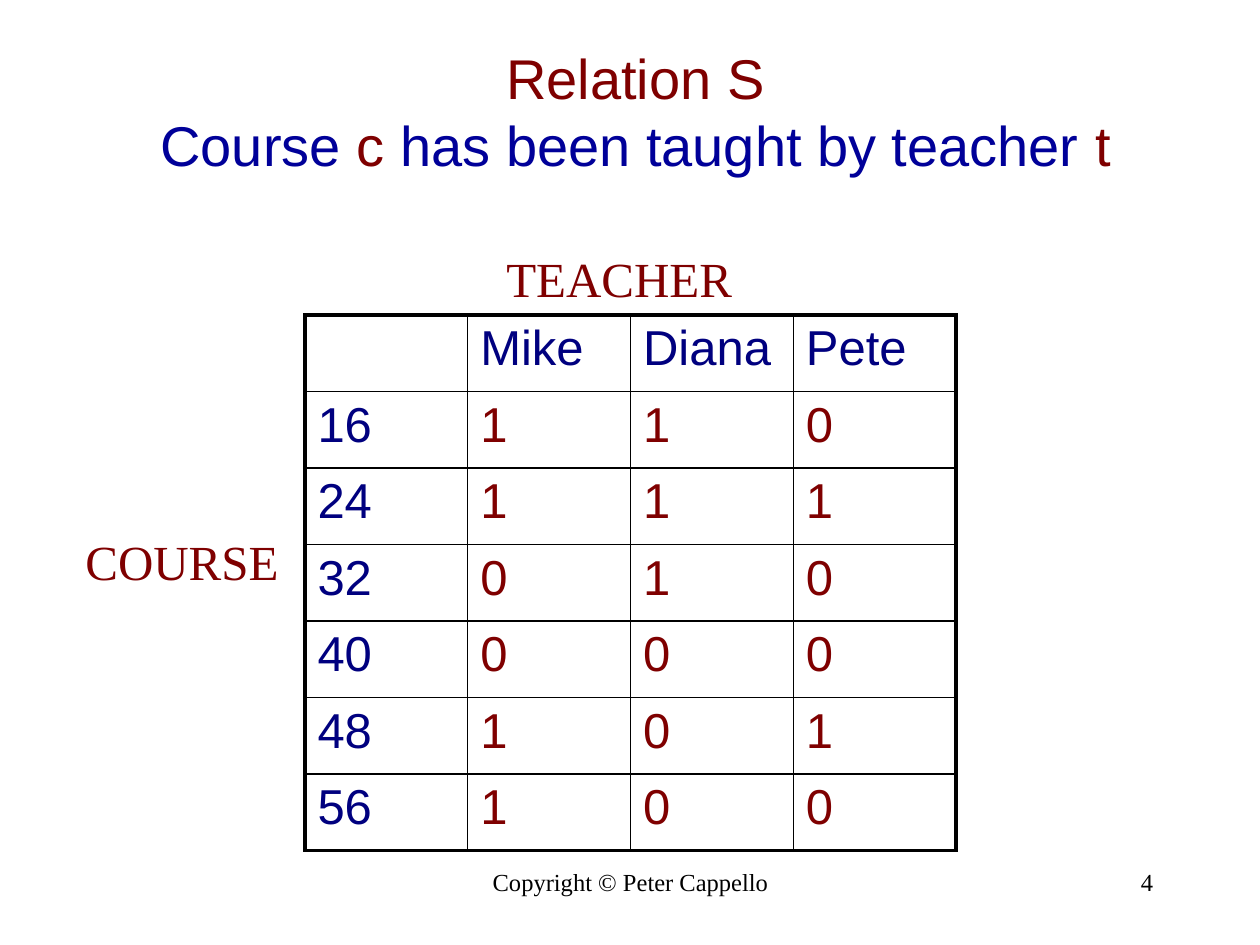
from lxml import etree
from pptx import Presentation
from pptx.dml.color import RGBColor
from pptx.enum.text import MSO_ANCHOR, MSO_AUTO_SIZE, PP_ALIGN
from pptx.oxml.ns import qn
from pptx.util import Inches, Pt

BLACK = RGBColor(0x00, 0x00, 0x00)
MAROON = RGBColor(0x7F, 0x00, 0x00)
NAVY = RGBColor(0x00, 0x00, 0x7F)
BLUE = RGBColor(0x00, 0x00, 0x99)
LEFT, CENTER, RIGHT = PP_ALIGN.LEFT, PP_ALIGN.CENTER, PP_ALIGN.RIGHT
MIDDLE = MSO_ANCHOR.MIDDLE
NO_AUTOFIT = MSO_AUTO_SIZE.NONE
FIT_SHAPE = MSO_AUTO_SIZE.SHAPE_TO_FIT_TEXT

SANS, SERIF = "Arial", "Times New Roman"
TITLE_ONLY = 5
OUTER, INNER = Pt(2.25), Pt(1)

TEACHING = [
    ["", "Mike", "Diana", "Pete"],
    ["16", "1", "1", "0"],
    ["24", "1", "1", "1"],
    ["32", "0", "1", "0"],
    ["40", "0", "0", "0"],
    ["48", "1", "0", "1"],
    ["56", "1", "0", "0"],
]


def style(font, name, size, color):
    font.name = name
    font.size = Pt(size)
    font.color.rgb = color


def add_title(slide):
    title = slide.shapes.title
    title.left, title.top = Inches(0.42), Inches(0.25)
    title.width, title.height = Inches(9.25), Inches(1.25)
    frame = title.text_frame
    frame.auto_size = NO_AUTOFIT
    frame.vertical_anchor = MIDDLE
    heading = frame.paragraphs[0]
    heading.alignment = CENTER
    style(heading.font, SANS, 32, MAROON)
    heading.add_run().text = "Relation S"
    heading.add_line_break()
    for words, color in [
        ("Course ", BLUE),
        ("c", MAROON),
        (" has been taught by teacher ", BLUE),
        ("t", MAROON),
    ]:
        run = heading.add_run()
        run.text = words
        run.font.color.rgb = color


def add_text(slide, words, box, size, color, alignment=LEFT, wrap=True):
    frame = slide.shapes.add_textbox(*map(Inches, box)).text_frame
    frame.word_wrap = wrap
    frame.auto_size = NO_AUTOFIT if wrap else FIT_SHAPE
    line = frame.paragraphs[0]
    line.text = words
    line.alignment = alignment
    style(line.font, SERIF, size, color)


def set_borders(cell, widths):
    properties = cell._tc.get_or_add_tcPr()
    for index, (side, width) in enumerate(widths.items()):
        border = etree.Element(qn(f"a:{side}"), w=str(width))
        fill = etree.SubElement(border, qn("a:solidFill"))
        etree.SubElement(fill, qn("a:srgbClr"), val=str(BLACK))
        properties.insert(index, border)


def add_relation_table(slide):
    rows, columns = len(TEACHING), len(TEACHING[0])
    table = slide.shapes.add_table(
        rows, columns, Inches(2.42), Inches(2.5), Inches(5.17), Inches(4.25)
    ).table
    table.first_row = table.horz_banding = False
    for r, values in enumerate(TEACHING):
        for c, value in enumerate(values):
            cell = table.cell(r, c)
            cell.fill.background()
            entry = cell.text_frame.paragraphs[0]
            entry.text = value
            style(entry.font, SANS, 28, NAVY if r == 0 or c == 0 else MAROON)
            set_borders(cell, {
                "lnL": OUTER if c == 0 else INNER,
                "lnR": OUTER if c == columns - 1 else INNER,
                "lnT": OUTER if r == 0 else INNER,
                "lnB": OUTER if r == rows - 1 else INNER,
            })


def main():
    deck = Presentation()
    deck.slide_width, deck.slide_height = Inches(10), Inches(7.5)
    slide = deck.slides.add_slide(deck.slide_layouts[TITLE_ONLY])
    add_title(slide)
    add_text(slide, "Copyright © Peter Cappello", (3.42, 6.83, 3.17, 0.5), 14, BLACK, CENTER)
    add_text(slide, "4", (7.17, 6.83, 2.08, 0.5), 14, BLACK, RIGHT)
    add_relation_table(slide)
    add_text(slide, "COURSE", (0.58, 4.17, 1.74, 0.57), 28, MAROON, wrap=False)
    add_text(slide, "TEACHER", (3.92, 1.92, 1.99, 0.57), 28, MAROON, wrap=False)
    deck.save("out.pptx")


if __name__ == "__main__":
    main()
